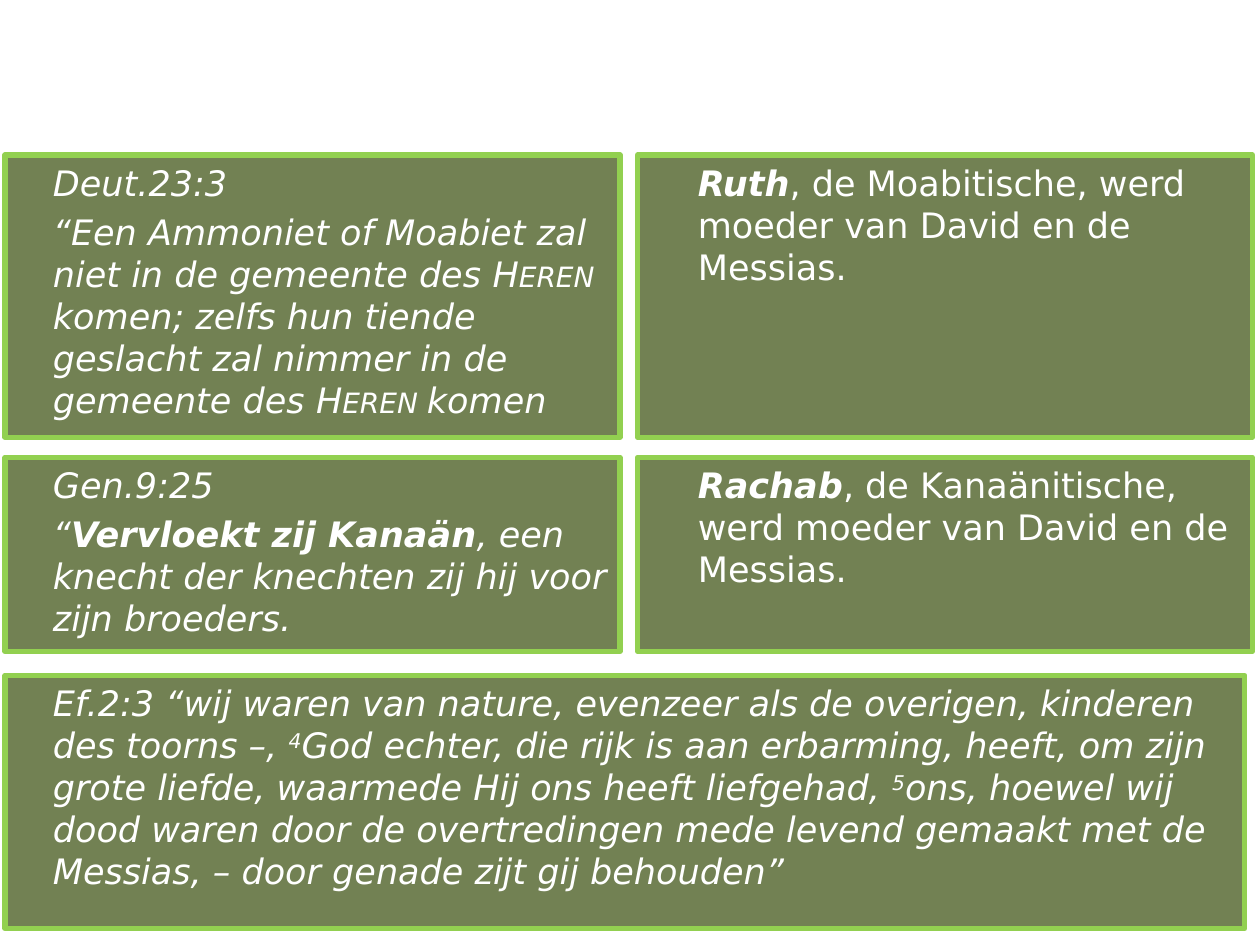
"""Build a slide that sets Bible verses beside their answer."""
from dataclasses import dataclass

from lxml import etree
from pptx import Presentation
from pptx.dml.color import RGBColor
from pptx.enum.shapes import MSO_SHAPE
from pptx.enum.text import MSO_ANCHOR, PP_ALIGN
from pptx.oxml.ns import qn
from pptx.util import Inches, Pt

RECT = MSO_SHAPE.RECTANGLE
TOP = MSO_ANCHOR.TOP
LEFT = PP_ALIGN.LEFT


@dataclass(frozen=True)
class Theme:
    panel: RGBColor = RGBColor(0x4F, 0x62, 0x28)
    border: RGBColor = RGBColor(0x92, 0xD0, 0x50)
    text: RGBColor = RGBColor(0xFF, 0xFF, 0xFF)
    opacity: int = 80
    font: str = "DejaVu Sans"
    size: int = 20
    border_width: int = 3
    space_before: int = 4
    indent: float = 0.38


VERSE = {"italic": True}
NAME = {"italic": True, "bold": True}
PLAIN = {"italic": False}
SMALL_CAPS = {"cap": "small"}
SUPERSCRIPT = {"baseline": "30000"}

LEFT_X, RIGHT_X = 0.04, 5.06
HALF_W, FULL_W = 4.88, 9.84
TOP_ROW, MIDDLE_ROW, BOTTOM_ROW = (1.23, 2.24), (3.63, 1.54), (5.36, 2.01)
VERSE_INSET, ANSWER_INSET = 0, 0.1

DEUTERONOMY = [
    [("Deut.23:3", VERSE, {})],
    [
        ("“Een Ammoniet of Moabiet zal niet in de gemeente des ", VERSE, {}),
        ("Heren", VERSE, SMALL_CAPS),
        (" komen; zelfs hun tiende geslacht zal nimmer in de gemeente des ", VERSE, {}),
        ("Heren ", VERSE, SMALL_CAPS),
        ("komen", VERSE, {}),
    ],
]
RUTH = [[("Ruth", NAME, {}),
         (", de Moabitische, werd moeder van David en de Messias.", PLAIN, {})]]
GENESIS = [
    [("Gen.9:25", VERSE, {})],
    [
        ("“", VERSE, {}),
        ("Vervloekt zij Kanaän", NAME, {}),
        (", een knecht der knechten zij hij voor zijn broeders.", VERSE, {}),
    ],
]
RAHAB = [[("Rachab", NAME, {}),
          (", de Kanaänitische, werd moeder van David en de Messias.", PLAIN, {})]]
EPHESIANS = [[
    ("Ef.2:3 “wij waren van nature, evenzeer als de overigen, "
     "kinderen des toorns –, ", VERSE, {}),
    ("4", VERSE, SUPERSCRIPT),
    ("God echter, die rijk is aan erbarming, heeft, om zijn grote liefde, "
     "waarmede Hij ons heeft liefgehad, ", VERSE, {}),
    ("5", VERSE, SUPERSCRIPT),
    ("ons, hoewel wij dood waren door de overtredingen mede levend gemaakt "
     "met de Messias, – door genade zijt gij behouden”", VERSE, {}),
]]

PANELS = [
    (LEFT_X, TOP_ROW, HALF_W, VERSE_INSET, DEUTERONOMY),
    (RIGHT_X, TOP_ROW, HALF_W, ANSWER_INSET, RUTH),
    (LEFT_X, MIDDLE_ROW, HALF_W, VERSE_INSET, GENESIS),
    (RIGHT_X, MIDDLE_ROW, HALF_W, ANSWER_INSET, RAHAB),
    (LEFT_X, BOTTOM_ROW, FULL_W, VERSE_INSET, EPHESIANS),
]


class SlideBuilder:
    def __init__(self, slide, theme):
        self.slide = slide
        self.theme = theme

    def panel(self, x, row, width, inset, paragraphs):
        y, height = row
        s = self.slide.shapes.add_shape(
            RECT, Inches(x), Inches(y), Inches(width), Inches(height))
        s.shadow.inherit = False
        s.fill.solid()
        s.fill.fore_color.rgb = self.theme.panel
        color = s._element.spPr.find(qn("a:solidFill"))[0]
        etree.SubElement(color, qn("a:alpha"), val=str(self.theme.opacity * 1000))
        s.line.color.rgb = self.theme.border
        s.line.width = Pt(self.theme.border_width)
        tf = s.text_frame
        frame = {"word_wrap": True, "vertical_anchor": TOP,
                 "margin_left": Inches(inset), "margin_right": Inches(0.1),
                 "margin_top": Inches(0.05), "margin_bottom": Inches(0.05)}
        for name, value in frame.items():
            setattr(tf, name, value)
        for i, runs in enumerate(paragraphs):
            p = tf.add_paragraph() if i else tf.paragraphs[0]
            self.paragraph(p, runs, self.theme.space_before if i else 0)

    def paragraph(self, p, runs, space_before):
        p.alignment = LEFT
        p.space_before = Pt(space_before)
        p._p.get_or_add_pPr().set("marL", str(Inches(self.theme.indent)))
        for text, style, extras in runs:
            self.run(p, text, style, extras)

    def run(self, p, text, style, extras):
        r = p.add_run()
        r.text = text
        base = {"name": self.theme.font, "size": Pt(self.theme.size)}
        for name, value in {**base, **style}.items():
            setattr(r.font, name, value)
        r.font.color.rgb = self.theme.text
        for name, value in extras.items():
            r._r.get_or_add_rPr().set(name, value)


def main():
    prs = Presentation()
    prs.slide_width, prs.slide_height = Inches(10), Inches(7.5)
    builder = SlideBuilder(prs.slides.add_slide(prs.slide_layouts[6]), Theme())
    for panel in PANELS:
        builder.panel(*panel)
    prs.save("out.pptx")


if __name__ == "__main__":
    main()
